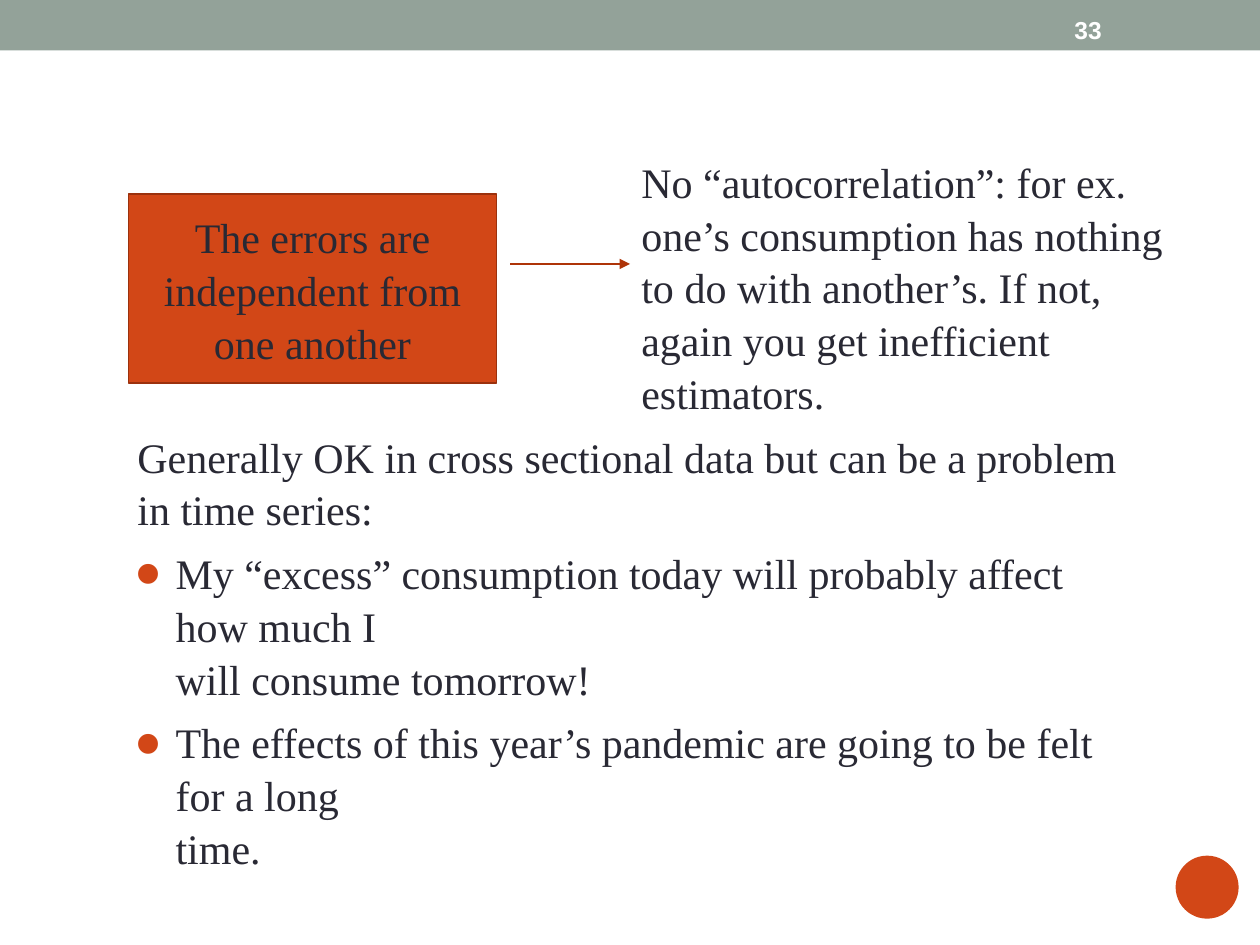
from lxml import etree
from pptx import Presentation
from pptx.dml.color import RGBColor
from pptx.enum.shapes import MSO_CONNECTOR, MSO_SHAPE
from pptx.enum.text import MSO_ANCHOR, MSO_AUTO_SIZE, PP_ALIGN
from pptx.oxml.ns import qn
from pptx.util import Cm, Pt

RECTANGLE, OVAL = MSO_SHAPE.RECTANGLE, MSO_SHAPE.OVAL
STRAIGHT = MSO_CONNECTOR.STRAIGHT
TOP, MIDDLE = MSO_ANCHOR.TOP, MSO_ANCHOR.MIDDLE
LEFT, CENTER = PP_ALIGN.LEFT, PP_ALIGN.CENTER
NO_AUTOFIT = MSO_AUTO_SIZE.NONE

SAGE = RGBColor(0x93, 0xA2, 0x99)
ORANGE = RGBColor(0xD2, 0x47, 0x17)
RUST = RGBColor(0x9B, 0x31, 0x0D)
ARROW_RED = RGBColor(0xAE, 0x34, 0x08)
INK = RGBColor(0x29, 0x29, 0x34)
WHITE = RGBColor(0xFF, 0xFF, 0xFF)
HANGING = Cm(0.77)


def set_bullet(paragraph, bulleted):
    """Give the paragraph a round orange bullet, or none at all."""
    properties = paragraph._p.get_or_add_pPr()
    indent = HANGING if bulleted else 0
    properties.set("marL", str(indent))
    properties.set("indent", str(-indent))
    if not bulleted:
        etree.SubElement(properties, qn("a:buNone"))
        return
    colour = etree.SubElement(properties, qn("a:buClr"))
    etree.SubElement(colour, qn("a:srgbClr")).set("val", str(ORANGE))
    etree.SubElement(properties, qn("a:buSzPct")).set("val", "85000")
    etree.SubElement(properties, qn("a:buChar")).set("char", "⚫")


def write(frame, text, size=24, font="Times New Roman", colour=INK, bold=False,
          align=LEFT, anchor=TOP, inset=0.03, left_inset=0, spacing=1.05,
          bulleted=False, before=0, append=False):
    """Write one formatted paragraph into a text frame."""
    frame.word_wrap = True
    frame.auto_size = NO_AUTOFIT
    frame.vertical_anchor = anchor
    frame.margin_left, frame.margin_top = Cm(left_inset), Cm(inset)
    frame.margin_right = frame.margin_bottom = 0
    paragraph = frame.add_paragraph() if append else frame.paragraphs[0]
    set_bullet(paragraph, bulleted)
    paragraph.text = text
    paragraph.alignment = align
    paragraph.line_spacing = spacing
    paragraph.space_before = Pt(before)
    for run in paragraph.runs:
        run.font.size, run.font.name, run.font.bold = Pt(size), font, bold
        run.font.color.rgb = colour


def add_block(slide, kind, left, top, width, height, fill, outline=None):
    """Add a flat filled shape, outlined only when a colour is given."""
    block = slide.shapes.add_shape(kind, left, top, width, height)
    block.shadow.inherit = False
    block.fill.solid()
    block.fill.fore_color.rgb = fill
    if outline is None:
        block.line.fill.background()
    else:
        block.line.color.rgb = outline
        block.line.width = Pt(1)
    return block


def add_arrow(slide, left, top, length):
    """Add a thin horizontal arrow pointing right."""
    arrow = slide.shapes.add_connector(STRAIGHT, left, top, left + length, top)
    arrow.line.color.rgb = ARROW_RED
    arrow.line.width = Pt(1)
    head = etree.SubElement(arrow.line._get_or_add_ln(), qn("a:tailEnd"))
    head.set("type", "triangle")
    etree.SubElement(arrow._element.spPr, qn("a:effectLst"))


def add_header(slide, left, top, width, height):
    """Build the top band with the page number."""
    add_block(slide, RECTANGLE, left, top, width, height, SAGE)
    number = slide.shapes.add_textbox(left + width - Cm(4.24), top + Cm(0.05),
                                      Cm(2.97), Cm(0.91))
    write(number.text_frame, "33", size=14, font="Arial", colour=WHITE,
          bold=True, anchor=MIDDLE, inset=0.2, left_inset=0.5, spacing=1)


def add_assumption(slide, left, top, width, height):
    """Build the assumption box, its arrow and the explanation."""
    assumption = add_block(slide, RECTANGLE, left, top + Cm(0.84), Cm(7.42),
                           Cm(3.81), ORANGE, RUST)
    write(assumption.text_frame,
          "The errors are independent from one another",
          align=CENTER, inset=0.3)
    add_arrow(slide, left + Cm(7.7), top + Cm(2.25), Cm(2.41))
    text_left = Cm(10.34)
    explanation = slide.shapes.add_textbox(left + text_left, top,
                                           width - text_left, height)
    write(explanation.text_frame,
          "No “autocorrelation”: for ex. one’s consumption has nothing to do "
          "with another’s. If not, again you get inefficient estimators.")


def add_discussion(slide, left, top, width, height):
    """Fill the body placeholder with the remark and its examples."""
    body = slide.placeholders[1]
    body.left, body.top, body.width, body.height = left, top, width, height
    write(body.text_frame, "Generally OK in cross sectional data but can be "
                           "a problem in time series:")
    for example in (
        "My “excess” consumption today will probably affect how much I\v"
        "will consume tomorrow!",
        "The effects of this year’s pandemic are going to be felt for a long\v"
        "time.",
    ):
        write(body.text_frame, example, bulleted=True, before=6, append=True)


def main():
    """Build and save the slide."""
    deck = Presentation()
    deck.slide_width, deck.slide_height = Cm(25.4), Cm(19.05)
    slide = deck.slides.add_slide(deck.slide_layouts[1])
    empty_title = slide.shapes.title._element
    empty_title.getparent().remove(empty_title)
    add_header(slide, 0, 0, deck.slide_width, Cm(1.02))
    add_block(slide, OVAL, Cm(23.7), Cm(17.25), Cm(1.27), Cm(1.27), ORANGE)
    add_assumption(slide, Cm(2.59), Cm(3.07), Cm(21.18), Cm(4.17))
    add_discussion(slide, Cm(2.77), Cm(8.61), Cm(20.32), Cm(6.6))
    deck.save("out.pptx")


if __name__ == "__main__":
    main()
